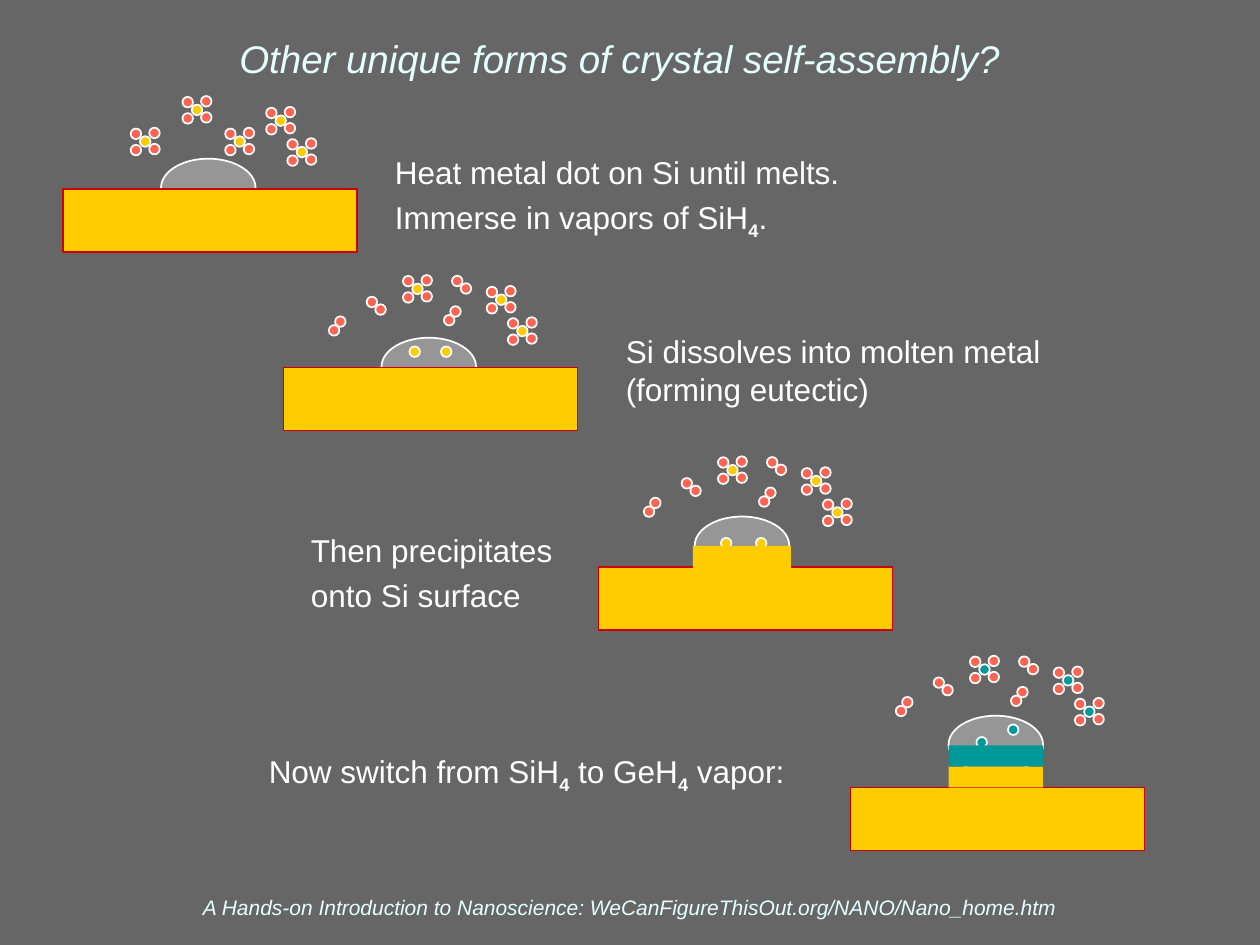
from pptx import Presentation
from pptx.dml.color import RGBColor
from pptx.enum.shapes import MSO_SHAPE
from pptx.enum.text import MSO_ANCHOR, PP_ALIGN
from pptx.util import Pt

OVAL, RECTANGLE = MSO_SHAPE.OVAL, MSO_SHAPE.RECTANGLE
TOP, MIDDLE, BOTTOM = MSO_ANCHOR.TOP, MSO_ANCHOR.MIDDLE, MSO_ANCHOR.BOTTOM
LEFT, CENTER = PP_ALIGN.LEFT, PP_ALIGN.CENTER

COLORS = {
    "background": "666666", "heading": "E5FFFF", "text": "FFFFFF",
    "outline": "FFFFFF", "silicon": "FFCC00", "germanium": "009999",
    "hydrogen": "FF6351", "metal": "969696", "substrate_edge": "CC0000",
}
ATOM = 6
# Positions below are relative to the left of the substrate and the top of the vapor.
HYDROGEN_OFFSETS = [(5.3, -4.9), (5.3, 4.3), (-5.3, -4.4), (-5.3, 4.9)]
HYDRIDES = [(121.4, 11.3), (133.5, 29.2), (73.6, 5.1)]
EXTRA_HYDRIDES = [(98, 23.2), (44, 23.2)]
FALLING, RISING = (5, 4.3), (-3.6, 5)
HYDROGEN_PAIRS = [
    ((47.5, 12.6), FALLING), ((29.5, 23.8), RISING),
    ((96.3, 0.6), FALLING), ((95.3, 18), RISING),
]

# Columns are (x, y, width, height, material); dissolved atoms are (x, y).
STAGES = [
    {"left": 36, "top": 54.7, "substrate": 53.3, "dome": (56, 36),
     "vapor": "silicon", "reacted": False, "dissolved": [], "columns": []},
    {"left": 162, "top": 157, "substrate": 53, "dome": (56, 36),
     "vapor": "silicon", "reacted": True,
     "dissolved": [(72, 41), (90, 41)], "columns": []},
    {"left": 342, "top": 260.6, "substrate": 63.4, "dome": (55, 34.6),
     "vapor": "silicon", "reacted": True,
     "dissolved": [(70, 46.8), (90, 46.8)],
     "columns": [(54, 51.4, 56, 36, "silicon")]},
    {"left": 486, "top": 374.5, "substrate": 75.5, "dome": (56, 34.5),
     "vapor": "germanium", "reacted": True,
     "dissolved": [(72, 46.7), (90, 39.5)],
     "columns": [(56, 63.5, 54, 12, "silicon"), (56, 51.5, 54, 12, "germanium")]},
]

# Each paragraph is a list of (text, is_subscript) runs.
CAPTIONS = [
    ((222, 84, 306, 56), [
        [("Heat metal dot on Si until melts.", False)],
        [("Immerse in vapors of SiH", False), ("4", True), (".", False)]]),
    ((354, 186, 306, 49), [
        [("Si dissolves into molten metal (forming eutectic)", False)]]),
    ((174, 300, 156, 53), [
        [("Then precipitates", False)],
        [("onto Si surface", False)]]),
    ((150, 426, 318, 31), [
        [("Now switch from SiH", False), ("4", True), (" to GeH", False),
         ("4", True), (" vapor:", False)]]),
]


def rgb(name):
    return RGBColor.from_string(COLORS[name])


def add_text(slide, box, paragraphs, size=18, color="text", italic=False,
             align=LEFT, anchor=TOP):
    frame = slide.shapes.add_textbox(*map(Pt, box)).text_frame
    frame.word_wrap = True
    frame.vertical_anchor = anchor
    frame.margin_left = frame.margin_right = Pt(3.6)
    frame.margin_top = frame.margin_bottom = Pt(3.6)
    for index, runs in enumerate(paragraphs):
        paragraph = frame.add_paragraph() if index else frame.paragraphs[0]
        paragraph.alignment = align
        if index:
            paragraph.space_before = Pt(4)
        for text, subscript in runs:
            run = paragraph.add_run()
            run.text = text
            font = run.font
            font.name, font.size, font.italic = "Arial", Pt(size), italic
            font.color.rgb = rgb(color)
            if subscript:
                font.bold = True
                font._element.set("baseline", "-25000")


def add_part(group, kind, box, fill, line=None):
    shape = group.shapes.add_shape(kind, *map(Pt, box))
    shape.shadow.inherit = False
    shape.fill.solid()
    shape.fill.fore_color.rgb = rgb(fill)
    if line:
        shape.line.color.rgb = rgb(line)
        shape.line.width = Pt(1)
    else:
        shape.line.fill.background()


def add_atom(group, x, y, element):
    add_part(group, OVAL, (x, y, ATOM, ATOM), element, "outline")


def add_vapor(group, left, top, element, reacted):
    """Draw hydride molecules, and the freed hydrogen once some have reacted."""
    hydrides = HYDRIDES if reacted else HYDRIDES + EXTRA_HYDRIDES
    for x, y in hydrides:
        add_atom(group, left + x, top + y, element)
        for dx, dy in HYDROGEN_OFFSETS:
            add_atom(group, left + x + dx, top + y + dy, "hydrogen")
    if reacted:
        for (x, y), (dx, dy) in HYDROGEN_PAIRS:
            add_atom(group, left + x, top + y, "hydrogen")
            add_atom(group, left + x + dx, top + y + dy, "hydrogen")


def add_stage(slide, stage):
    """Draw one growth stage: metal dome, substrate, grown columns and vapor."""
    group = slide.shapes.add_group_shape()
    left, top = stage["left"], stage["top"]
    dome_x, dome_y = stage["dome"]
    add_part(group, OVAL, (left + dome_x, top + dome_y, 54, 33), "metal", "outline")
    add_part(group, RECTANGLE, (left, top + stage["substrate"], 168, 36),
             "silicon", "substrate_edge")
    for x, y in stage["dissolved"]:
        add_atom(group, left + x, top + y, stage["vapor"])
    for x, y, width, height, material in stage["columns"]:
        add_part(group, RECTANGLE, (left + x, top + y, width, height), material)
    add_vapor(group, left, top, stage["vapor"], stage["reacted"])


def main():
    presentation = Presentation()
    presentation.slide_width, presentation.slide_height = Pt(720), Pt(540)
    slide = presentation.slides.add_slide(presentation.slide_layouts[6])
    slide.background.fill.solid()
    slide.background.fill.fore_color.rgb = rgb("background")

    footer = "A Hands-on Introduction to Nanoscience: WeCanFigureThisOut.org/NANO/Nano_home.htm"
    add_text(slide, (24, 508, 672, 21), [[(footer, False)]], 12, "heading",
             True, CENTER, BOTTOM)
    add_text(slide, (18, 0, 672, 66),
             [[("Other unique forms of crystal self-assembly?", False)]],
             22, "heading", True, CENTER, MIDDLE)
    for box, paragraphs in CAPTIONS:
        add_text(slide, box, paragraphs)
    for stage in STAGES:
        add_stage(slide, stage)
    presentation.save("out.pptx")


if __name__ == "__main__":
    main()
